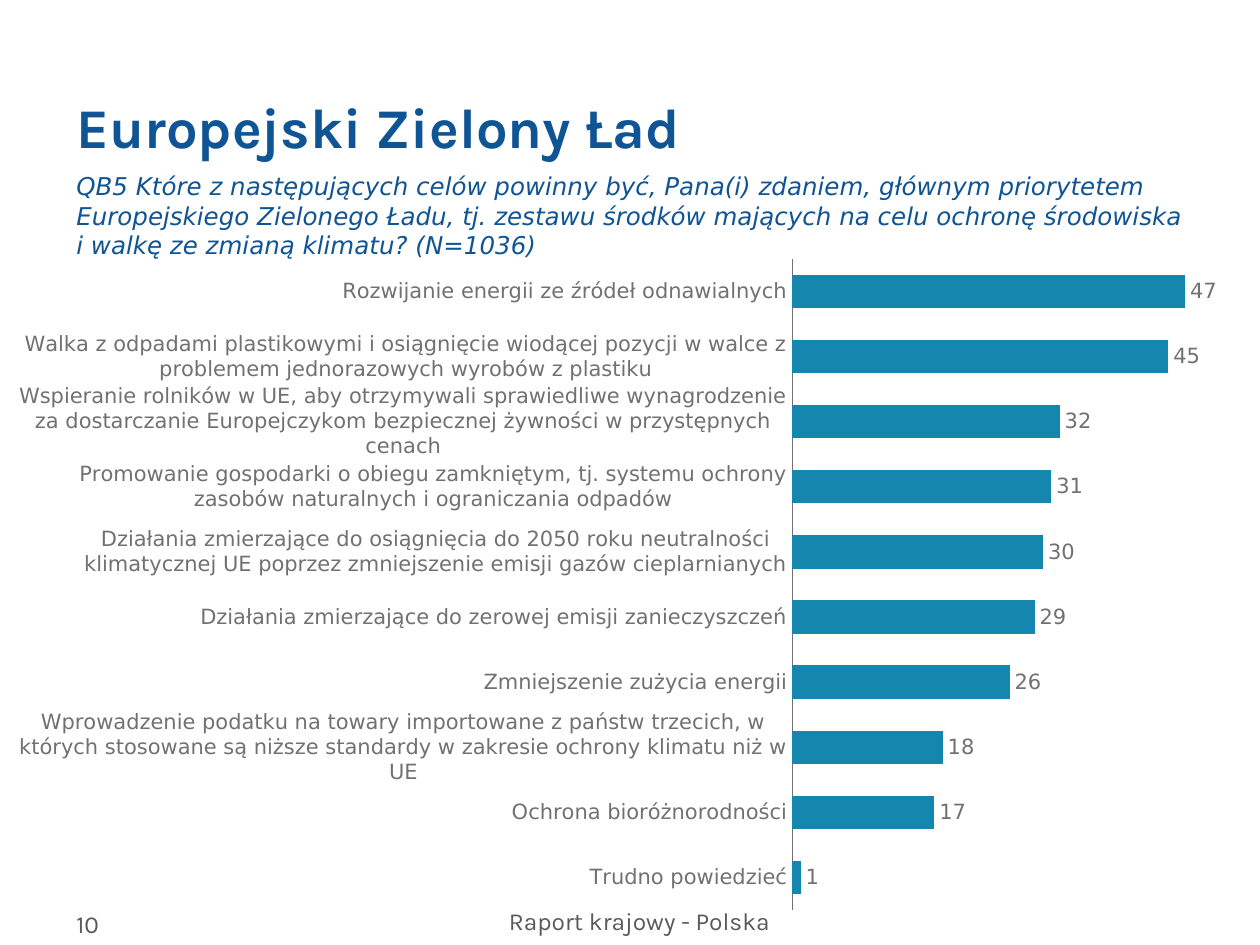
from pptx import Presentation
from pptx.chart.data import CategoryChartData
from pptx.dml.color import RGBColor
from pptx.enum.chart import XL_CHART_TYPE, XL_LABEL_POSITION, XL_TICK_LABEL_POSITION, XL_TICK_MARK
from pptx.enum.text import MSO_ANCHOR, PP_ALIGN
from pptx.oxml import parse_xml
from pptx.oxml.ns import nsdecls
from pptx.util import Emu, Pt

BLUE, TEAL, GREY, DARK = "0F5494", "1586AE", "717171", "595959"

PRIORITIES = [
    ("Rozwijanie energii ze źródeł odnawialnych", 47),
    ("Walka z odpadami plastikowymi i osiągnięcie wiodącej pozycji w walce z "
     "problemem jednorazowych wyrobów z plastiku", 45),
    ("Wspieranie rolników w UE, aby otrzymywali sprawiedliwe wynagrodzenie za "
     "dostarczanie Europejczykom bezpiecznej żywności w przystępnych cenach", 32),
    ("Promowanie gospodarki o obiegu zamkniętym, tj. systemu ochrony zasobów "
     "naturalnych i ograniczania odpadów", 31),
    ("Działania zmierzające do osiągnięcia do 2050 roku neutralności klimatycznej "
     "UE poprzez zmniejszenie emisji gazów cieplarnianych", 30),
    ("Działania zmierzające do zerowej emisji zanieczyszczeń", 29),
    ("Zmniejszenie zużycia energii", 26),
    ("Wprowadzenie podatku na towary importowane z państw trzecich, w których "
     "stosowane są niższe standardy w zakresie ochrony klimatu niż w UE", 18),
    ("Ochrona bioróżnorodności", 17),
    ("Trudno powiedzieć", 1),
]


def px(n):
    return Emu(round(n * 914400 / 126))


def rgb(color):
    return RGBColor.from_string(color)


def set_font(font, size, name, color, bold=False, italic=False):
    font.size, font.name = Pt(size), name
    font.color.rgb = rgb(color)
    font.bold, font.italic = bold, italic


def add_text(s, box, text, size, name, color, anchor=MSO_ANCHOR.TOP,
             align=PP_ALIGN.LEFT, **style):
    tf = s.shapes.add_textbox(*map(px, box)).text_frame
    tf.word_wrap = True
    tf.vertical_anchor = anchor
    p = tf.paragraphs[0]
    p.alignment = align
    r = p.add_run()
    r.text = text
    set_font(r.font, size, name, color, **style)


def add_heading(s, left, top, width):
    """Title with the survey question below it."""
    add_text(s, (left, top, width, 129), "Europejski Zielony Ład", 32, "Karla",
             BLUE, MSO_ANCHOR.MIDDLE, bold=True)
    add_text(s, (left, top + 103, width, 500),
             "QB5 Które z następujących celów powinny być, Pana(i) zdaniem, głównym "
             "priorytetem Europejskiego Zielonego Ładu, tj. zestawu środków mających "
             "na celu ochronę środowiska i walkę ze zmianą klimatu? (N=1036)",
             14, "DejaVu Sans", BLUE, italic=True)


def add_footer(s, left, top):
    """Page number on the left, report name in the middle."""
    add_text(s, (left + 376, top + 21, 399, 44), "Raport krajowy - Polska", 14,
             "Karla", DARK, align=PP_ALIGN.CENTER)
    add_text(s, (left, top, 294, 66), "10", 14, "Karla", DARK, MSO_ANCHOR.BOTTOM)


def set_plot_area(chart, x, y, w, h):
    """Fix the inner plot area, as fractions of the chart."""
    parts = "".join(f'<c:{tag} val="{val}"/>' for tag, val in (
        ("layoutTarget", "inner"), ("xMode", "edge"), ("yMode", "edge"),
        ("x", x), ("y", y), ("w", w), ("h", h)))
    plot_area = chart.plots[0]._element.getparent()
    for old in plot_area.findall("{*}layout"):
        plot_area.remove(old)
    plot_area.insert(0, parse_xml(
        f'<c:layout {nsdecls("c")}><c:manualLayout>{parts}</c:manualLayout></c:layout>'))


def add_priority_chart(s, box):
    data = CategoryChartData()
    names, values = zip(*PRIORITIES)
    data.categories = names
    data.add_series("Series 1", values)
    chart = s.shapes.add_chart(XL_CHART_TYPE.BAR_CLUSTERED, *map(px, box), data).chart
    chart.has_legend = chart.has_title = False
    set_font(chart.font, 18, "DejaVu Sans", "000000")
    set_plot_area(chart, 0.529, 0.016, 0.279, 0.958)

    axis = chart.category_axis
    axis.reverse_order = True
    axis.major_tick_mark = axis.minor_tick_mark = XL_TICK_MARK.NONE
    axis.tick_label_position = XL_TICK_LABEL_POSITION.NEXT_TO_AXIS
    axis.format.line.color.rgb = rgb(GREY)
    axis.format.line.width = Pt(0.75)
    set_font(axis.tick_labels.font, 12, "DejaVu Sans", GREY)

    scale = chart.value_axis
    scale.minimum_scale, scale.maximum_scale = 0, 50
    scale.has_major_gridlines = False
    scale.visible = False

    plot = chart.plots[0]
    plot.vary_by_categories = False
    plot.gap_width, plot.overlap = 95, -20
    fill = plot.series[0].format.fill
    fill.solid()
    fill.fore_color.rgb = rgb(TEAL)
    plot.has_data_labels = True
    labels = plot.data_labels
    labels.show_value = True
    labels.position = XL_LABEL_POSITION.OUTSIDE_END
    set_font(labels.font, 12, "DejaVu Sans", GREY)


def main():
    prs = Presentation()
    prs.slide_width, prs.slide_height = px(1260), px(945)
    s = prs.slides.add_slide(prs.slide_layouts[6])
    add_footer(s, 64, 879)
    add_heading(s, 64, 62, 1134)
    add_priority_chart(s, (0, 248, 1498, 680))
    prs.save("out.pptx")


if __name__ == "__main__":
    main()
